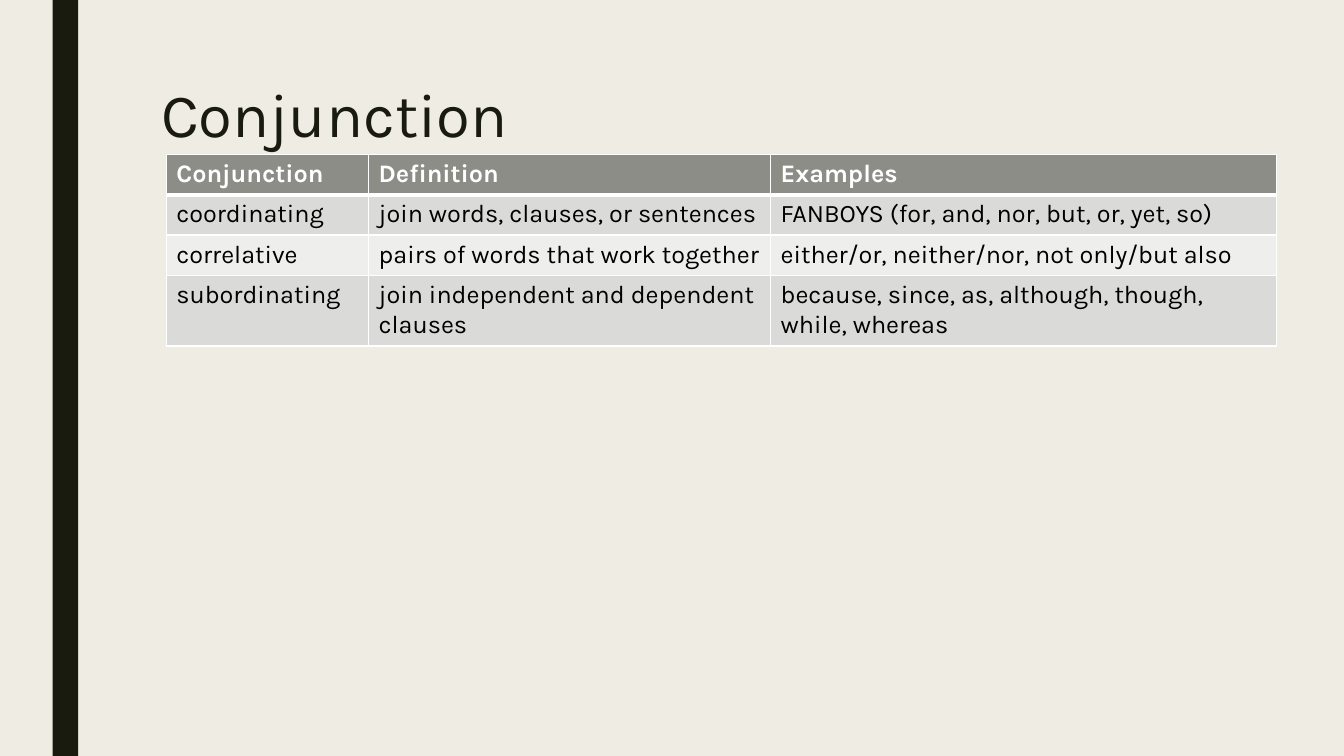
from lxml.etree import SubElement
from pptx import Presentation
from pptx.dml.color import RGBColor
from pptx.enum.shapes import MSO_SHAPE
from pptx.enum.text import MSO_ANCHOR
from pptx.oxml.ns import qn
from pptx.util import Cm, Pt


def rgb(value):
    return RGBColor.from_string(value)


def write(tf, text, size, color, bold=False):
    p = tf.paragraphs[0]
    r = p.add_run()
    r.text = text
    font = {"name": "Karla", "size": Pt(size), "bold": bold}
    for name, value in font.items():
        setattr(r.font, name, value)
    r.font.color.rgb = rgb(color)
    return p


prs = Presentation()
prs.slide_width, prs.slide_height = Cm(33.87), Cm(19.05)
s = prs.slides.add_slide(prs.slide_layouts[6])
s.background.fill.solid()
s.background.fill.fore_color.rgb = rgb("EFEDE3")

bar = s.shapes.add_shape(MSO_SHAPE.RECTANGLE, Cm(1.33), 0, Cm(0.64), Cm(19.05))
bar.shadow.inherit = False
bar.fill.solid()
bar.fill.fore_color.rgb = rgb("191B0E")
bar.line.fill.background()

title = s.shapes.add_textbox(Cm(3.81), Cm(1.9), Cm(26.67), Cm(2.14))
tf = title.text_frame
for name, value in {"word_wrap": True, "vertical_anchor": MSO_ANCHOR.MIDDLE}.items():
    setattr(tf, name, value)
p = write(tf, "Conjunction", 44, "191B0E")
p.line_spacing = 0.89

rows = [
    ("Conjunction", "Definition", "Examples"),
    ("coordinating", "join words, clauses, or sentences",
     "FANBOYS (for, and, nor, but, or, yet, so)"),
    ("correlative", "pairs of words that work together",
     "either/or, neither/nor, not only/but also"),
    ("subordinating", "join independent and dependent clauses",
     "because, since, as, although, though, while, whereas"),
]
widths = [5.1, 10.13, 12.75]
fills = ["8C8D86", "DADBD9", "EEEEED", "DADBD9"]

table = s.shapes.add_table(len(rows), len(widths), Cm(4.19), Cm(3.89),
                           Cm(sum(widths)), Cm(0.97 * len(rows))).table
for column, width in zip(table.columns, widths):
    column.width = Cm(width)

for i, row in enumerate(rows):
    table.rows[i].height = Cm(0.97)
    header = i == 0
    for j, text in enumerate(row):
        cell = table.cell(i, j)
        write(cell.text_frame, text, 18, "FFFFFF" if header else "000000", header)
        tcPr = cell._tc.get_or_add_tcPr()
        for side in "LRTB":
            thick = (header and side == "B") or (i == 1 and side == "T")
            ln = SubElement(tcPr, qn(f"a:ln{side}"), w=str(Pt(3 if thick else 1)))
            SubElement(SubElement(ln, qn("a:solidFill")), qn("a:srgbClr"), val="FFFFFF")
        cell.fill.solid()
        cell.fill.fore_color.rgb = rgb(fills[i])

prs.save("out.pptx")
